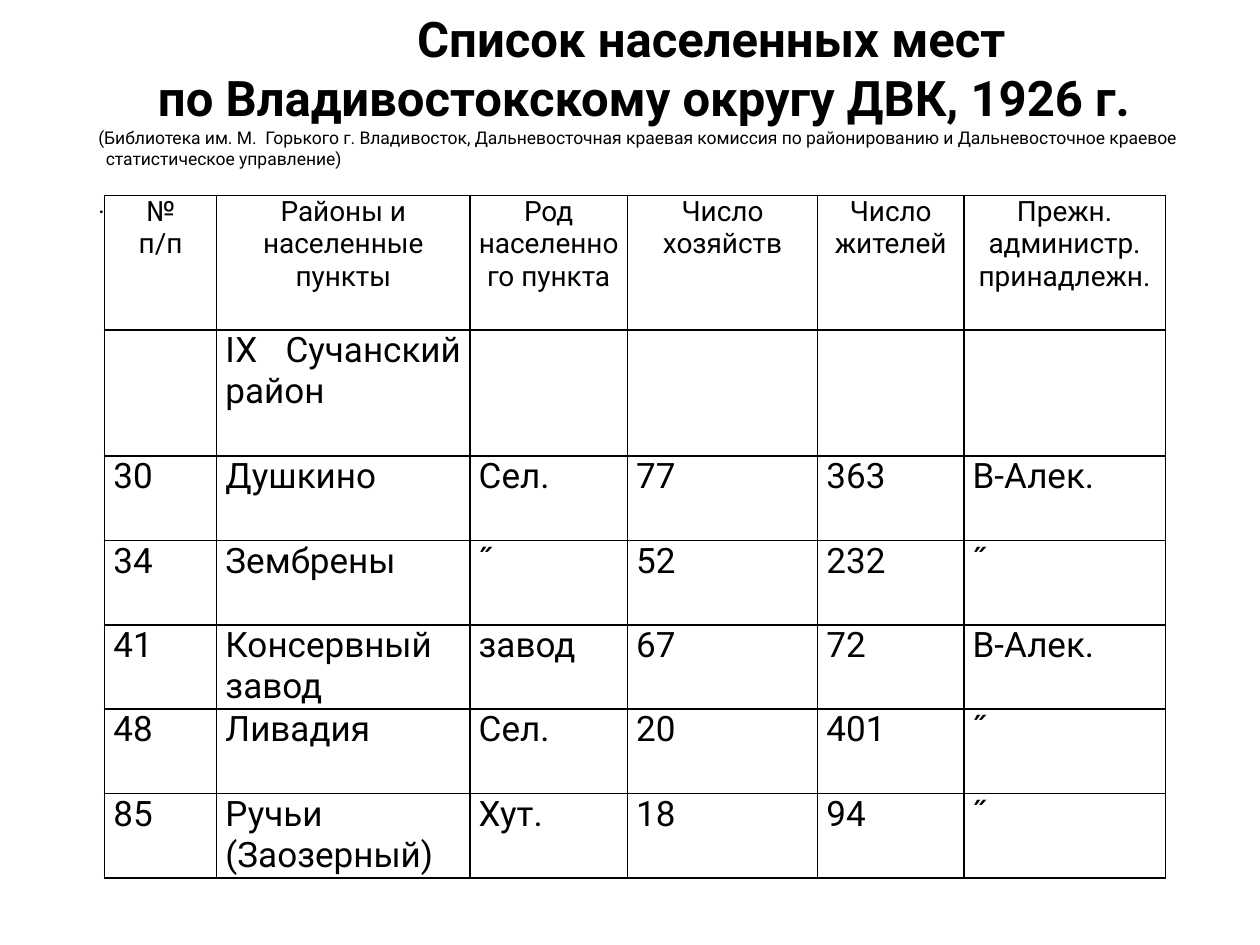
from lxml.etree import SubElement as Sub
from pptx import Presentation
from pptx.dml.color import RGBColor
from pptx.enum.text import MSO_ANCHOR as Anchor, MSO_AUTO_SIZE as Fit, PP_ALIGN as Align
from pptx.oxml.ns import qn
from pptx.util import Inches, Pt

BLACK = RGBColor(0, 0, 0)
WHITE = RGBColor(255, 255, 255)
FONT = "Roboto"
WIDE, HIGH = 10, 7.5

# text, size, bold, alignment, first-line indent (in), space before (pt)
HEAD = [
    ("Список населенных мест", 28, True, Align.CENTER, 1.22, 0),
    ("по Владивостокскому округу ДВК, 1926 г.", 28, True, Align.CENTER, 0.15, 0),
    ("(Библиотека им. М.  Горького г. Владивосток, Дальневосточная краевая "
     "комиссия по районированию и Дальневосточное краевое",
     10, False, Align.LEFT, 0.25, 0),
    ("статистическое управление)", 10, False, Align.LEFT, 0.31, 0),
    (".", 14, False, Align.LEFT, 0.25, 11.7),
]

COLS = [0.89, 2.01, 1.25, 1.51, 1.16, 1.6]
ROWS = [1.07, 1.0] + [0.67] * 5
DATA = [
    ["№\nп/п", "Районы и населенные пункты", "Род населенного пункта",
     "Число хозяйств", "Число жителей", "Прежн. администр. принадлежн."],
    ["", "IX Сучанский район", "", "", "", ""],
    ["30", "Душкино", "Сел.", "77", "363", "В-Алек."],
    ["34", "Зембрены", "˝", "52", "232", "˝"],
    ["41", "Консервный завод", "завод", "67", "72", "В-Алек."],
    ["48", "Ливадия", "Сел.", "20", "401", "˝"],
    ["85", "Ручьи (Заозерный)", "Хут.", "18", "94", "˝"],
]


class Page:
    def __init__(self, deck):
        self.deck = deck
        self.slide = deck.slides.add_slide(deck.slide_layouts[5])

    def place(self, x, y, w, h):
        """Turn shares of the slide into lengths."""
        wide, high = self.deck.slide_width, self.deck.slide_height
        return int(x * wide), int(y * high), int(w * wide), int(h * high)

    def text(self, para, words, size, bold=False, align=Align.LEFT):
        para.alignment = align
        para.font.size = Pt(size)
        if words:
            run = para.add_run()
            run.text = words
            font = run.font
            font.name, font.size, font.bold = FONT, Pt(size), bold
            font.color.rgb = BLACK

    def title(self, box, lines):
        shape = self.slide.shapes.title
        shape.left, shape.top, shape.width, shape.height = self.place(*box)
        frame = shape.text_frame
        frame.word_wrap, frame.auto_size = True, Fit.NONE
        frame.vertical_anchor = Anchor.TOP
        frame.margin_top = Inches(0.07)
        for i, (words, size, bold, align, indent, gap) in enumerate(lines):
            para = frame.add_paragraph() if i else frame.paragraphs[0]
            props = para._p.get_or_add_pPr()
            props.set("marL", "0")
            props.set("indent", str(int(Inches(indent))))
            para.space_before = Pt(gap)
            self.text(para, words, size, bold, align)

    def border(self, cell):
        props = cell._tc.get_or_add_tcPr()
        for side in ("lnL", "lnR", "lnT", "lnB"):
            line = Sub(props, qn("a:" + side), w=str(int(Pt(1))))
            fill = Sub(line, qn("a:solidFill"))
            Sub(fill, qn("a:srgbClr"), val=str(BLACK))

    def cell(self, cell, words, size, align):
        self.border(cell)
        cell.fill.solid()
        cell.fill.fore_color.rgb = WHITE
        cell.margin_left = cell.margin_right = Inches(0.07)
        cell.margin_top = cell.margin_bottom = 0
        frame = cell.text_frame
        for i, part in enumerate(words.split("\n")):
            para = frame.add_paragraph() if i else frame.paragraphs[0]
            self.text(para, part, size, align=align)

    def table(self, x, y, cols, rows, data):
        box = self.place(x, y, sum(cols) / WIDE, sum(rows) / HIGH)
        grid = self.slide.shapes.add_table(len(rows), len(cols), *box).table
        grid.first_row = grid.horz_banding = False
        for col, width in zip(grid.columns, cols):
            col.width = Inches(width)
        for r, (row, height) in enumerate(zip(grid.rows, rows)):
            row.height = Inches(height)
            size, align = (20, Align.JUSTIFY) if r else (16, Align.CENTER)
            for cell, words in zip(row.cells, data[r]):
                self.cell(cell, words, size, align)


def main():
    deck = Presentation()
    deck.slide_width, deck.slide_height = Inches(WIDE), Inches(HIGH)
    page = Page(deck)
    page.title((0.043, 0, 0.921, 0.27), HEAD)
    page.table(0.083, 1.55 / HIGH, COLS, ROWS, DATA)
    deck.save("out.pptx")


if __name__ == "__main__":
    main()
